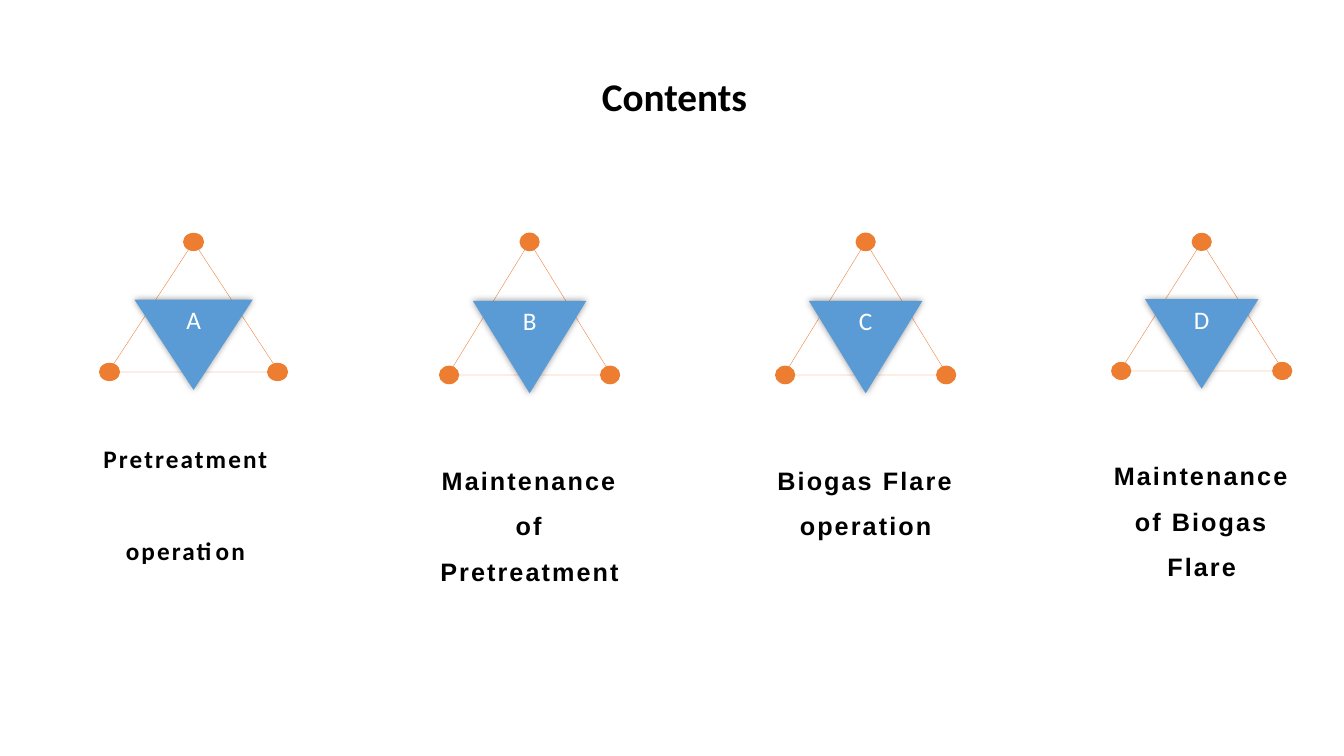
from dataclasses import dataclass

from lxml.etree import SubElement
from pptx import Presentation
from pptx.dml.color import RGBColor
from pptx.enum.shapes import MSO_SHAPE
from pptx.enum.text import MSO_ANCHOR, PP_ALIGN
from pptx.oxml.ns import qn
from pptx.util import Inches, Pt

COLORS = {"accent": "ED7D31", "emblem": "5B9BD5", "letter": "FEFFFF", "text": "000000"}
FIRST_CENTER, CENTER_STEP = 1.92, 3.333
APEX_TOP = 2.4


@dataclass
class Topic:
    letter: str
    lines: tuple[str, ...]
    width: float
    height: float
    font: str = "Arial"
    text_top: float = 0.5
    text_right: float = 0.1
    paragraph_gap: float = 0


TOPICS = [
    Topic("A", ("Pretreatment", "operation"), 1.69, 1.29, "Calibri", 0.32, 0.26, 33),
    Topic("B", ("Maintenance of Pretreatment",), 1.62, 1.32),
    Topic("C", ("Biogas Flare operation",), 1.62, 1.32),
    Topic("D", ("Maintenance of Biogas Flare",), 1.62, 1.28),
]


def color(name: str) -> RGBColor:
    return RGBColor.from_string(COLORS[name])


def write(para, text: str, color_name: str, spacing: float = 0, **font_format) -> None:
    """Add one centred run; spacing is the letter spacing in points."""
    para.alignment = PP_ALIGN.CENTER
    span = para.add_run()
    span.text = text
    for name, value in font_format.items():
        setattr(span.font, name, value)
    span.font.color.rgb = color(color_name)
    if spacing:
        span.font._element.set("spc", str(round(spacing * 100)))


def add_outline(page, center: float, topic: Topic) -> None:
    outline = page.shapes.add_shape(
        MSO_SHAPE.ISOSCELES_TRIANGLE, Inches(center - topic.width / 2),
        Inches(APEX_TOP), Inches(topic.width), Inches(topic.height))
    outline.shadow.inherit = False
    outline.fill.background()
    outline.line.color.rgb = color("accent")
    outline.line.width = Pt(0.25)


def add_dots(page, center: float, topic: Topic) -> None:
    width, height = topic.width * 0.124, topic.height * 0.14
    reach = topic.width * 0.493
    base = APEX_TOP + topic.height
    for x, y in ((center, APEX_TOP), (center + reach, base), (center - reach, base)):
        dot = page.shapes.add_shape(
            MSO_SHAPE.OVAL, Inches(x - width / 2), Inches(y - height / 2),
            Inches(width), Inches(height))
        dot.shadow.inherit = False
        dot.fill.solid()
        dot.fill.fore_color.rgb = color("accent")
        dot.line.fill.background()


def add_glow_shadow(shape) -> None:
    """Give the shape a soft black shadow on all sides."""
    shape.shadow.inherit = False
    effects = shape._element.spPr.find(qn("a:effectLst"))
    shadow = SubElement(effects, qn("a:outerShdw"), blurRad=str(Pt(5)), dist="0",
                        dir="0", algn="ctr", rotWithShape="0")
    black = SubElement(shadow, qn("a:srgbClr"), val=COLORS["text"])
    SubElement(black, qn("a:alpha"), val="40000")


def add_emblem(page, center: float, topic: Topic) -> None:
    half = topic.width * 0.695 / 2
    top = APEX_TOP + topic.height * 0.443
    builder = page.shapes.build_freeform(Inches(center - half), Inches(top))
    builder.add_line_segments([
        (Inches(center + half), Inches(top)),
        (Inches(center), Inches(top + topic.height * 0.695)),
    ], close=True)
    emblem = builder.convert_to_shape()
    add_glow_shadow(emblem)
    emblem.fill.solid()
    emblem.fill.fore_color.rgb = color("emblem")
    emblem.line.fill.background()
    emblem.text_frame.vertical_anchor = MSO_ANCHOR.TOP
    write(emblem.text_frame.paragraphs[0], topic.letter, "letter",
          size=Pt(18), name="Calibri")


def add_caption(page, center: float, topic: Topic) -> None:
    width = topic.width * 1.255
    box = page.shapes.add_textbox(
        Inches(center - width / 2), Inches(APEX_TOP + topic.height * 1.186),
        Inches(width), Inches(topic.height * 2.565))
    frame = box.text_frame
    frame.word_wrap = True
    frame.margin_top = Inches(topic.text_top)
    frame.margin_right = Inches(topic.text_right)
    for index, line in enumerate(topic.lines):
        para = frame.add_paragraph() if index else frame.paragraphs[0]
        para.line_spacing = 1.5
        if index:
            para.space_before = Pt(topic.paragraph_gap)
        write(para, line, "text", 1.5, size=Pt(18), name=topic.font, bold=True)


def add_title(page) -> None:
    title = page.shapes.title
    title.left, title.top = Inches(2.47), Inches(0.13)
    title.width, title.height = Inches(8.44), Inches(1.4)
    title.text_frame.vertical_anchor = MSO_ANCHOR.MIDDLE
    para = title.text_frame.paragraphs[0]
    para.line_spacing = 1.5
    write(para, "Contents", "text", size=Pt(28), name="Calibri", bold=True)


def main() -> None:
    deck = Presentation()
    deck.slide_width, deck.slide_height = Inches(13.33), Inches(7.5)
    page = deck.slides.add_slide(deck.slide_layouts[5])
    add_title(page)
    for index, topic in enumerate(TOPICS):
        center = FIRST_CENTER + index * CENTER_STEP
        for draw in (add_outline, add_dots, add_emblem, add_caption):
            draw(page, center, topic)
    deck.save("out.pptx")


if __name__ == "__main__":
    main()
